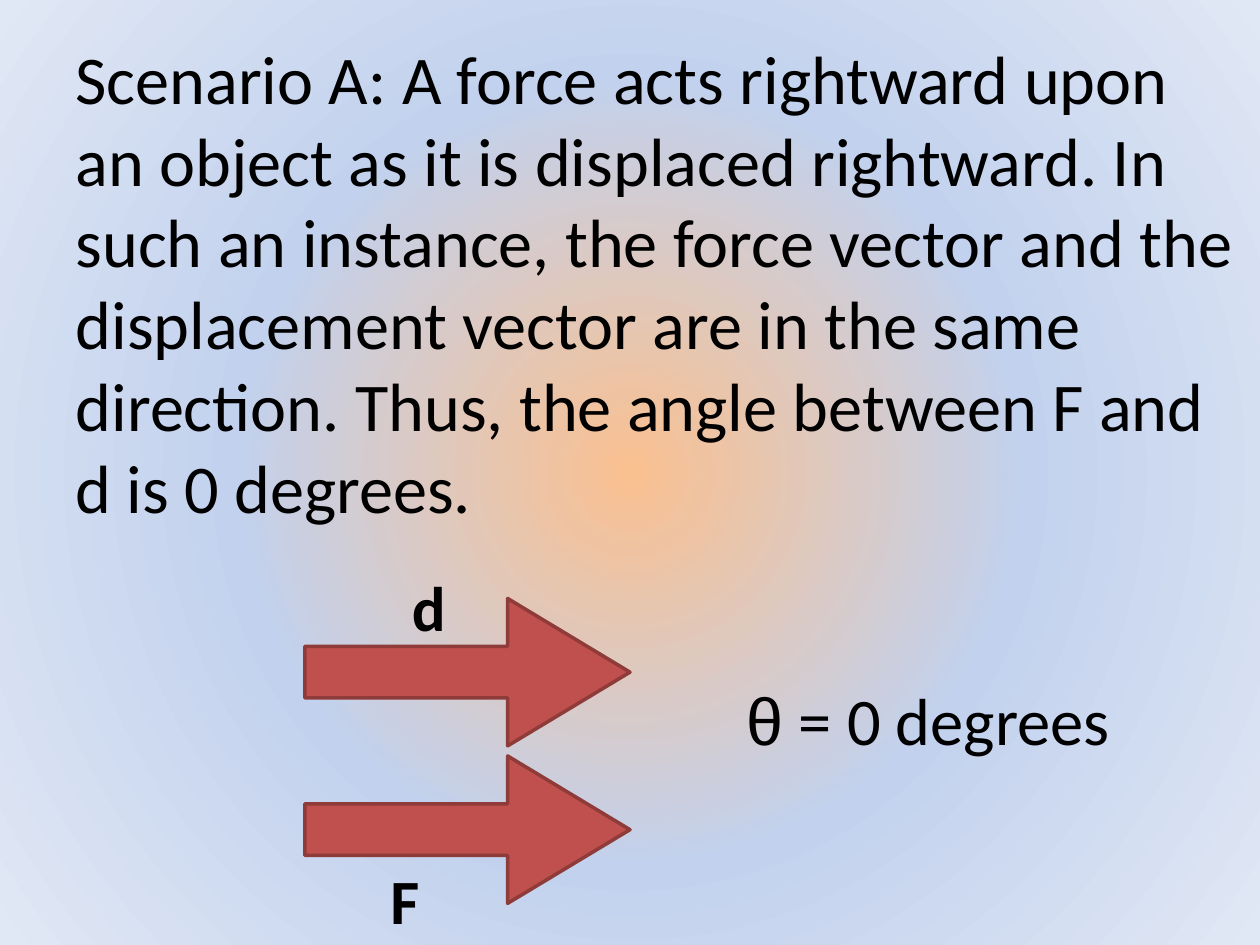
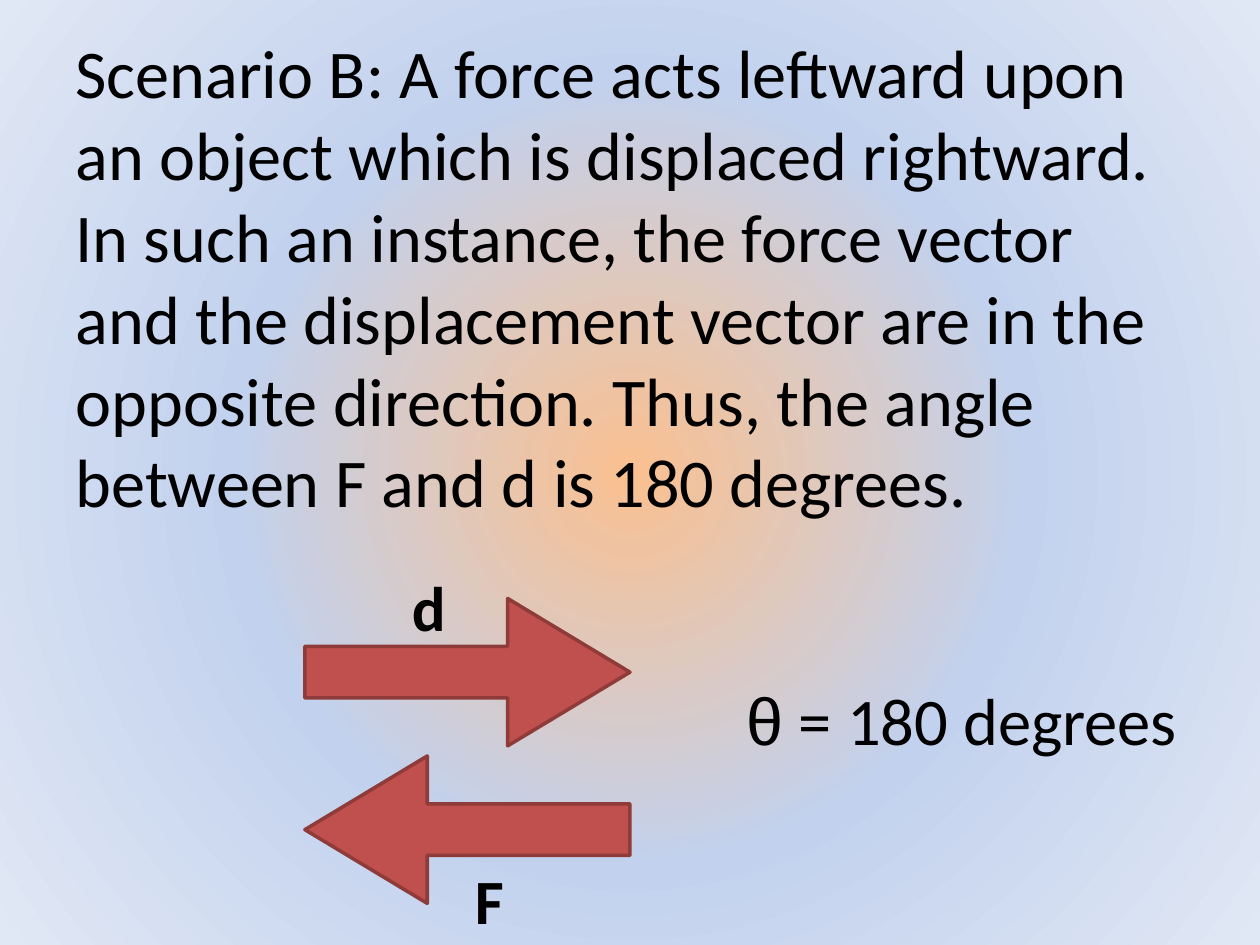
"""Build two slides comparing the angle between force and displacement vectors."""
from lxml.etree import SubElement
from pptx import Presentation
from pptx.dml.color import RGBColor
from pptx.enum.shapes import MSO_SHAPE
from pptx.enum.text import MSO_ANCHOR, MSO_AUTO_SIZE as AUTO_SIZE, PP_ALIGN
from pptx.oxml.ns import qn
from pptx.util import Inches, Pt

COLORS = {
    "text": "000000",
    "arrow": "C0504D",
    "arrow_line": "8E3B39",
    "glow_center": "FAC090",
    "glow_middle": "C2D1ED",
    "glow_edge": "E1E8F5",
}
GLOW_STOPS = [(0, "glow_center"), (50, "glow_middle"), (100, "glow_edge")]
TITLE_ONLY = 5
ARROW_LEFT, ARROW_WIDTH, ARROW_HEIGHT = 2.42, 2.58, 1.17
DISPLACEMENT_TOP, FORCE_TOP = 4.75, 6

SCENARIOS = [
    {
        "title": "Scenario A: A force acts rightward upon an object as it is displaced "
                 "rightward. In such an instance, the force vector and the displacement "
                 "vector are in the same direction. Thus, the angle between F and d is "
                 "0 degrees.",
        "title_size": (9.5, 3.87),
        "force_leftward": False,
        "force_label_left": 3,
        "angle": 0,
        "angle_width": 3.5,
    },
    {
        "title": "Scenario B: A force acts leftward upon an object which is displaced "
                 "rightward. In such an instance, the force vector and the displacement "
                 "vector are in the opposite direction. Thus, the angle between F and d "
                 "is 180 degrees.",
        "title_size": (9, 3.78),
        "force_leftward": True,
        "force_label_left": 3.67,
        "angle": 180,
        "angle_width": 3.83,
    },
]


def color(name):
    return RGBColor.from_string(COLORS[name])


def set_radial_background(master):
    fill = master.background.fill
    fill.solid()
    properties = master.element.find(".//" + qn("p:bgPr"))
    properties.remove(properties.find(qn("a:solidFill")))
    gradient = properties.makeelement(qn("a:gradFill"), {"rotWithShape": "1"})
    properties.insert(0, gradient)
    stops = SubElement(gradient, qn("a:gsLst"))
    for percent, name in GLOW_STOPS:
        stop = SubElement(stops, qn("a:gs"), pos=str(percent * 1000))
        SubElement(stop, qn("a:srgbClr"), val=COLORS[name])
    circle = SubElement(gradient, qn("a:path"), path="circle")
    SubElement(circle, qn("a:fillToRect"), {side: "50000" for side in "ltrb"})


def add_run(paragraph, text, size, font="Calibri", bold=False):
    run = paragraph.add_run()
    run.text = text
    run.font.name = font
    run.font.size = Pt(size)
    run.font.bold = bold
    run.font.color.rgb = color("text")


def set_title(slide, text, width, height):
    title = slide.shapes.title
    title.left, title.top = Inches(0.5), Inches(0.3)
    title.width, title.height = Inches(width), Inches(height)
    frame = title.text_frame
    frame.auto_size = AUTO_SIZE.NONE
    frame.vertical_anchor = MSO_ANCHOR.MIDDLE
    paragraph = frame.paragraphs[0]
    paragraph.alignment = PP_ALIGN.LEFT
    add_run(paragraph, text, 39)


def add_vector_arrow(slide, top, leftward=False):
    arrow = slide.shapes.add_shape(
        MSO_SHAPE.RIGHT_ARROW, Inches(ARROW_LEFT), Inches(top),
        Inches(ARROW_WIDTH), Inches(ARROW_HEIGHT))
    arrow.adjustments[0], arrow.adjustments[1] = 0.35, 0.83
    arrow.shadow.inherit = False
    arrow.fill.solid()
    arrow.fill.fore_color.rgb = color("arrow")
    arrow.line.color.rgb = color("arrow_line")
    arrow.line.width = Pt(2)
    if leftward:
        arrow.element.spPr.find(qn("a:xfrm")).set("flipH", "1")


def add_text_box(slide, left, top, width, height):
    box = slide.shapes.add_textbox(
        Inches(left), Inches(top), Inches(width), Inches(height))
    box.text_frame.word_wrap = True
    box.text_frame.auto_size = AUTO_SIZE.SHAPE_TO_FIT_TEXT
    return box.text_frame.paragraphs[0]


def add_vector_label(slide, letter, left, top):
    add_run(add_text_box(slide, left, top, 0.92, 0.71), letter, 36, bold=True)


def add_angle(slide, degrees, width):
    paragraph = add_text_box(slide, 5.83, 5.34, width, 0.74)
    add_run(paragraph, "θ", 38, font="Arial")
    add_run(paragraph, f" = {degrees} degrees", 38)


def add_scenario(presentation, scenario):
    slide = presentation.slides.add_slide(presentation.slide_layouts[TITLE_ONLY])
    set_title(slide, scenario["title"], *scenario["title_size"])
    add_vector_arrow(slide, DISPLACEMENT_TOP)
    add_vector_arrow(slide, FORCE_TOP, scenario["force_leftward"])
    add_vector_label(slide, "d", 3.17, 4.46)
    add_vector_label(slide, "F", scenario["force_label_left"], 6.79)
    add_angle(slide, scenario["angle"], scenario["angle_width"])


def main():
    presentation = Presentation()
    presentation.slide_width, presentation.slide_height = Inches(10), Inches(7.5)
    set_radial_background(presentation.slide_master)
    for scenario in SCENARIOS:
        add_scenario(presentation, scenario)
    presentation.save("out.pptx")


if __name__ == "__main__":
    main()
